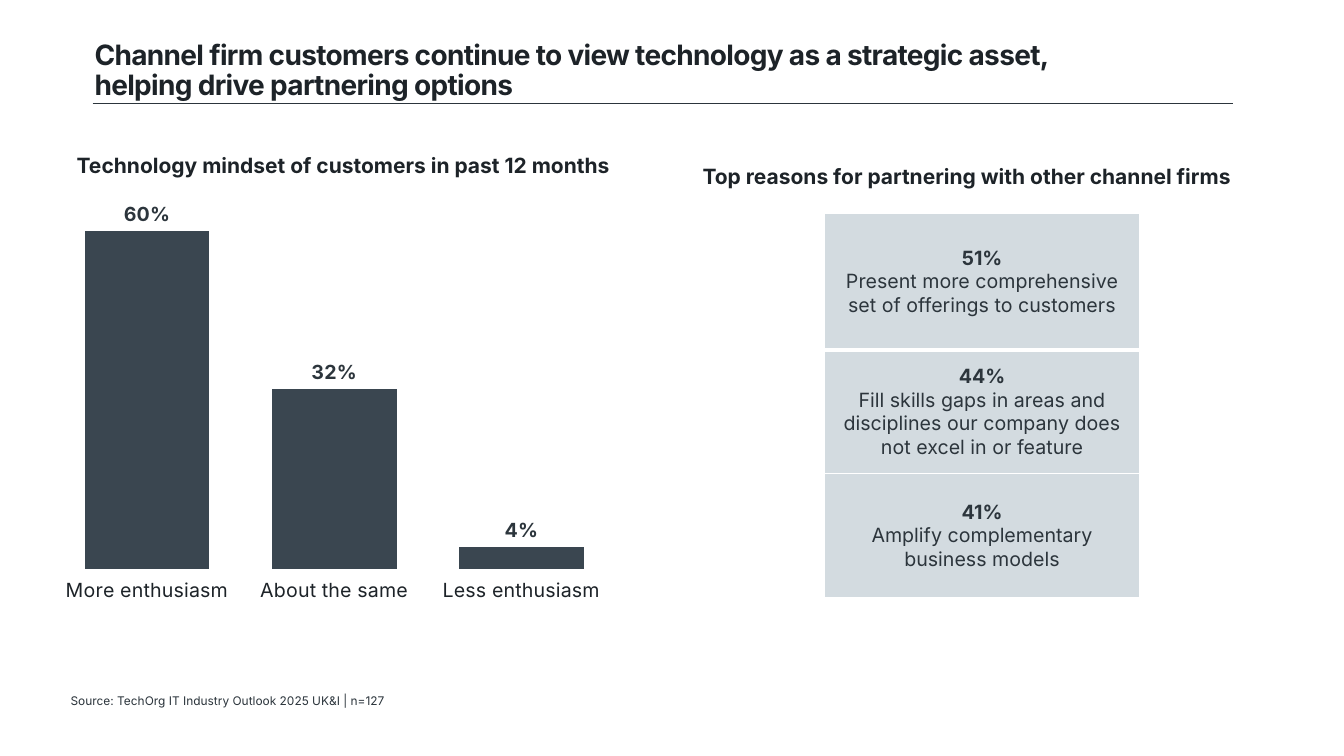
from pptx import Presentation
from pptx import util as u
from pptx.chart.data import CategoryChartData
from pptx.dml.color import RGBColor
from pptx.enum import chart as ch, text
from pptx.oxml import parse_xml
from pptx.oxml.ns import nsdecls

THEME = dict(ink="1D2328", slate="2C353C", bar="3A4650", cell="D3DBE0", white="FFFFFF",
             face="Inter", title=20, head=15, body=14, note=8.5)
hue = {k: RGBColor.from_string(THEME[k]) for k in ("ink", "slate", "bar", "cell", "white")}

deck = Presentation()
deck.slide_width, deck.slide_height = u.Inches(13.33), u.Inches(7.5)
slide = deck.slides.add_slide(deck.slide_layouts[6])


def area(x, y, w, h):
    """Turn percentages of the slide into lengths."""
    wide, high = deck.slide_width / 100, deck.slide_height / 100
    return int(x * wide), int(y * high), int(w * wide), int(h * high)


def style(font, size, color, bold=False):
    font.name, font.size, font.bold = THEME["face"], u.Pt(THEME[size]), bold
    font.color.rgb = hue[color]


# Title, headings and source: words, area, size, colour, bold, alignment, anchor
left, center = text.PP_ALIGN.LEFT, text.PP_ALIGN.CENTER
top, middle = text.MSO_ANCHOR.TOP, text.MSO_ANCHOR.MIDDLE
labels = [
    ("Channel firm customers continue to view technology as a strategic asset, "
     "helping drive partnering options",
     (6.3, 4.8, 76.2, 9.33), "title", "ink", True, left, middle),
    ("Technology mindset of customers in past 12 months",
     (3.98, 19.47, 43.14, 4.67), "head", "ink", True, center, top),
    ("Top reasons for partnering with other channel firms",
     (50.56, 20.93, 42.76, 4.67), "head", "ink", True, center, top),
    ("Source: TechOrg IT Industry Outlook 2025 UK&I | n=127",
     (5.25, 91.33, 52.5, 2.67), "note", "slate", False, left, middle),
]
for words, place, size, color, bold, align, anchor in labels:
    frame = slide.shapes.add_textbox(*area(*place)).text_frame
    frame.word_wrap, frame.vertical_anchor = True, anchor
    frame.text = words
    para = frame.paragraphs[0]
    para.alignment = align
    style(para.runs[0].font, size, color, bold)
    if size == "title":
        para.line_spacing = 0.9
        para.runs[0].font._element.set("spc", "-50")
    if size == "note":
        frame.margin_left = frame.margin_right = frame.margin_top = frame.margin_bottom = 0

# Rule under the title
x, y, w, _ = area(6.9, 13.73, 84.85, 0)
rule = slide.shapes.add_connector(1, x, y, x + w, y)
rule.line.color.rgb, rule.line.width = hue["slate"], u.Pt(1)
rule._element.spPr.append(parse_xml(f'<a:effectLst {nsdecls("a")}/>'))

# Column chart
data = CategoryChartData(number_format="0%")
data.categories = ["More enthusiasm", "About the same", "Less enthusiasm"]
data.add_series("Series 1", [0.6, 0.32, 0.04])
chart = slide.shapes.add_chart(ch.XL_CHART_TYPE.COLUMN_CLUSTERED,
                               *area(3.98, 26.8, 41.79, 60.53), data).chart
chart.has_legend = chart.has_title = False
style(chart.font, "body", "ink")
cats, vals = chart.category_axis, chart.value_axis
style(cats.tick_labels.font, "body", "ink")
cats.format.line.fill.background()
vals.visible = vals.has_major_gridlines = False
vals.minimum_scale, vals.maximum_scale = 0, 0.62

plot = chart.plots[0]
plot.gap_width, plot.vary_by_categories = 49, False
bars = plot.series[0].format
bars.fill.solid()
bars.fill.fore_color.rgb = hue["bar"]
bars.line.color.rgb, bars.line.width = hue["white"], u.Pt(0.75)
plot.has_data_labels = True
tags = plot.data_labels
tags.show_value, tags.position = True, ch.XL_LABEL_POSITION.OUTSIDE_END
tags.number_format, tags.number_format_is_linked = "0%", False
style(tags.font, "body", "slate", True)

sides = "".join(f'<c:{k} val="{v}"/>' for k, v in (
    ("layoutTarget", "inner"), ("xMode", "edge"), ("yMode", "edge"),
    ("x", 0), ("y", 0.03), ("w", 1), ("h", 0.77)))
zone = chart._chartSpace.chart.plotArea
for old in zone.findall("{*}layout"):
    zone.remove(old)
zone.insert(0, parse_xml(
    f'<c:layout {nsdecls("c")}><c:manualLayout>{sides}</c:manualLayout></c:layout>'))

# Table of reasons: share, reason, row height in percent of the slide
reasons = [
    ("51%", "Present more comprehensive set of offerings to customers", 18),
    ("44%", "Fill skills gaps in areas and disciplines our company does "
            "not excel in or feature", 16.4),
    ("41%", "Amplify complementary business models", 16.4),
]
grid = slide.shapes.add_table(len(reasons), 1, *area(61.37, 28.27, 23.41, 50.8)).table
grid.first_row = grid.horz_banding = False
for i, (share, reason, tall) in enumerate(reasons):
    grid.rows[i].height = area(0, 0, 0, tall)[3]
    cell = grid.cell(i, 0)
    cell.vertical_anchor = middle
    cell.fill.solid()
    cell.fill.fore_color.rgb = hue["cell"]
    cell.text_frame.text = f"{share}\n{reason}"
    for para in cell.text_frame.paragraphs:
        para.alignment = center
        style(para.runs[0].font, "body", "slate", para.text == share)
    thick = {"L": 1, "R": 1, "T": 3 if i == 1 else 1, "B": 3 if i == 0 else 1}
    for n, (side, width) in enumerate(thick.items()):
        cell._tc.tcPr.insert(n, parse_xml(
            f'<a:ln{side} {nsdecls("a")} w="{u.Pt(width)}"><a:solidFill>'
            f'<a:srgbClr val="{THEME["white"]}"/></a:solidFill></a:ln{side}>'))

deck.save("out.pptx")
